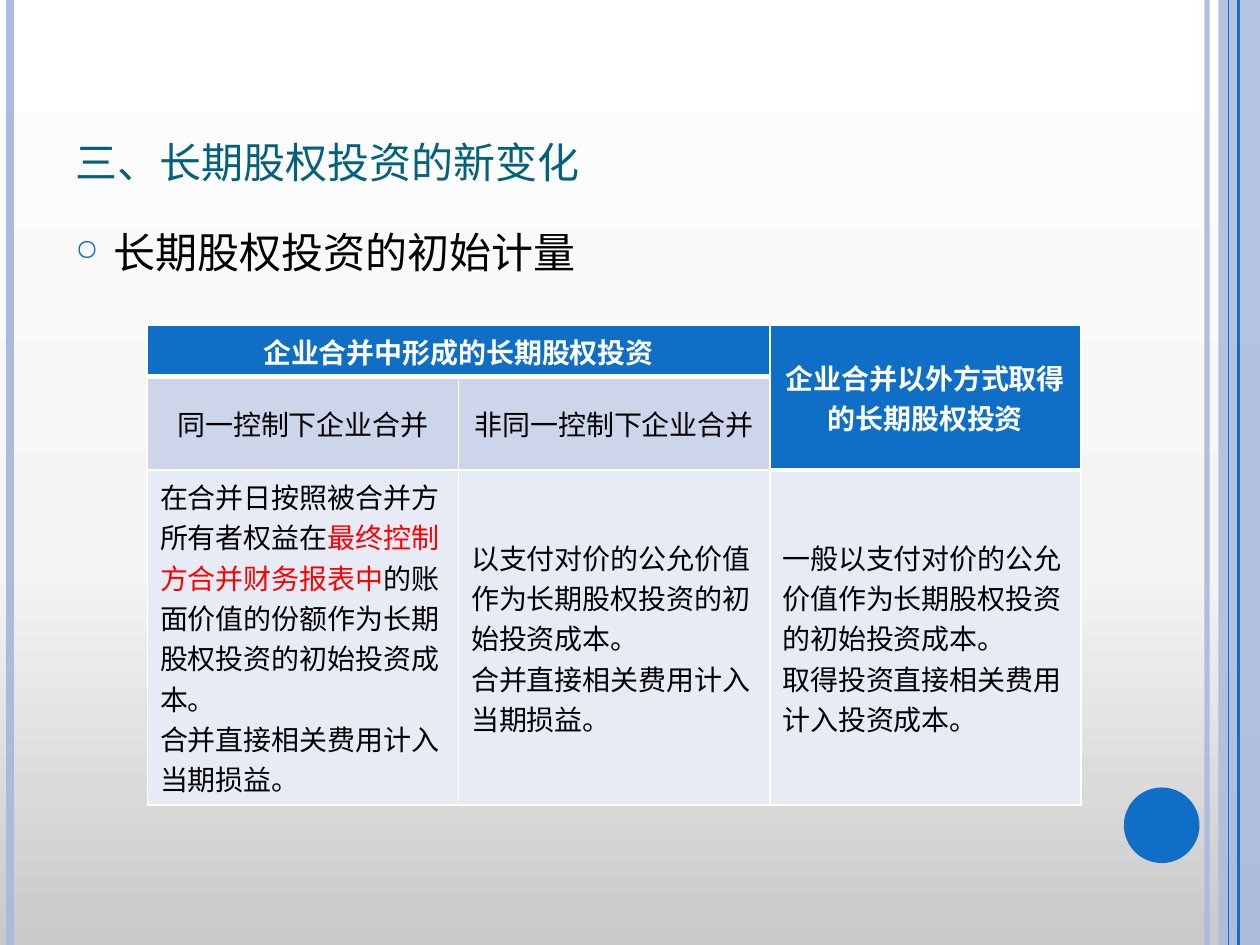
from pptx import Presentation
from pptx.dml.color import RGBColor as RGB
from pptx.enum.shapes import MSO_CONNECTOR as LINE, MSO_SHAPE as SHAPE
from pptx.enum.text import MSO_ANCHOR as ANCHOR, PP_ALIGN as ALIGN
from pptx.oxml import parse_xml as parse
from pptx.oxml.ns import nsdecls as names
from pptx.util import Inches, Pt
from lxml.etree import SubElement as Sub
from dataclasses import dataclass


@dataclass
class Theme:
    face: str = "Karla"
    blue: str = "0F6FC6"
    pale: str = "ABBBDF"
    teal: str = "04617B"
    black: str = "000000"
    white: str = "FFFFFF"
    red: str = "FF0000"
    band: str = "CCD5EA"
    light: str = "E7EBF5"
    title: int = 30
    body: int = 24
    cell: int = 16


look = Theme()
NS = names("a")


def write(par, text, size, color, bold=False):
    run = par.add_run()
    run.text = text
    style = {"name": look.face, "size": Pt(size), "bold": bold}
    for key, value in style.items():
        setattr(run.font, key, value)
    run.font.color.rgb = RGB.from_string(color)
    return run


def fade(fill, alpha):
    color = fill._xPr.find(".//{*}srgbClr")
    color.append(parse(f'<a:alpha {NS} val="{alpha * 1000}"/>'))


deck = Presentation()
deck.slide_width, deck.slide_height = Inches(10), Inches(7.5)
slide = deck.slides.add_slide(deck.slide_layouts[6])
shapes = slide.shapes

stops = "".join(
    f'<a:gs pos="{pos * 1000}"><a:srgbClr val="{color}"/></a:gs>'
    for pos, color in [(0, "C9C9C9"), (40, "F4F4F4"), (100, look.white)]
)
slide.element.cSld.insert(0, parse(
    f'<p:bg {names("p", "a")}><p:bgPr><a:gradFill><a:gsLst>{stops}</a:gsLst>'
    '<a:lin ang="16200000" scaled="0"/></a:gradFill><a:effectLst/></p:bgPr></p:bg>'
))

rules = [
    (9.58, look.pale, 3, 93),
    (0.08, look.pale, 4.5, 100),
    (9.83, look.blue, 1.5, 100),
    (9.75, look.blue, 0.75, 100),
]
blocks = [
    (SHAPE.RECTANGLE, (9.67, 0, 0.33, 7.5), look.pale, 87),
    (SHAPE.OVAL, (8.92, 6.25, 0.6, 0.6), look.blue, 100),
]


for kind, box, color, alpha in blocks:
    shape = shapes.add_shape(kind, *map(Inches, box))
    shape.shadow.inherit = False
    shape.fill.solid()
    shape.fill.fore_color.rgb = RGB.from_string(color)
    shape.line.fill.background()
    if alpha < 100:
        fade(shape.fill, alpha)

for x, color, width, alpha in rules:
    rule = shapes.add_connector(LINE.STRAIGHT, Inches(x), 0, Inches(x), Inches(7.5))
    rule.line.width = Pt(width)
    rule.line.color.rgb = RGB.from_string(color)
    if alpha < 100:
        fade(rule.line.fill, alpha)
    rule._element.spPr.append(parse(f"<a:effectLst {NS}/>"))

texts = [
    ("三、长期股权投资的新变化", (0.5, 0.3, 8.17, 1.25), ANCHOR.BOTTOM, look.title, look.teal),
    ("长期股权投资的初始计量", (0.5, 1.75, 8.17, 5.33), ANCHOR.TOP, look.body, look.black),
]
for text, box, anchor, size, color in texts:
    frame = shapes.add_textbox(*map(Inches, box)).text_frame
    frame.word_wrap = True
    frame.vertical_anchor = anchor
    par = frame.paragraphs[0]
    run = write(par, text, size, color)
    if size == look.title:
        run.font._element.set("cap", "small")
    else:
        par.space_before = Pt(6)
        props = par._p.get_or_add_pPr()
        props.set("marL", str(Inches(0.3)))
        props.set("indent", str(Inches(-0.3)))
        for part in (
            f'<a:buClr {NS}><a:srgbClr val="{look.blue}"/></a:buClr>',
            f'<a:buSzPct {NS} val="70000"/>',
            f'<a:buChar {NS} char="○"/>',
        ):
            props.append(parse(part))

fee = "合并直接相关费用计入当期损益。"
head = (look.blue, look.white, True, ALIGN.CENTER)
sub = (look.band, look.black, False, ALIGN.CENTER)
plain = (look.light, look.black, False, ALIGN.LEFT)
cells = {
    (0, 0): (head, [["企业合并中形成的长期股权投资"]]),
    (0, 1): (head, []),
    (0, 2): (head, [["企业合并以外方式取得的长期股权投资"]]),
    (1, 0): (sub, [["同一控制下企业合并"]]),
    (1, 1): (sub, [["非同一控制下企业合并"]]),
    (1, 2): (head, []),
    (2, 0): (plain, [
        ["在合并日按照被合并方所有者权益在", "最终控制方合并财务报表中",
         "的账面价值的份额作为长期股权投资的初始投资成本。"],
        [fee],
    ]),
    (2, 1): (plain, [["以支付对价的公允价值作为长期股权投资的初始投资成本。"], [fee]]),
    (2, 2): (plain, [
        ["一般以支付对价的公允价值作为长期股权投资的初始投资成本。"],
        ["取得投资直接相关费用计入投资成本。"],
    ]),
}
rows = [0.41, 0.74, 2.66]
table = shapes.add_table(
    3, 3, Inches(1.17), Inches(2.58), Inches(7.42), Inches(sum(rows))
).table
for row, tall in zip(table.rows, rows):
    row.height = Inches(tall)
for col in table.columns:
    col.width = Inches(2.47)
table.cell(0, 0).merge(table.cell(0, 1))
table.cell(0, 2).merge(table.cell(1, 2))

for (row, col), (style, pars) in cells.items():
    back, ink, bold, align = style
    cell = table.cell(row, col)
    cell.vertical_anchor = ANCHOR.MIDDLE
    props = cell._tc.get_or_add_tcPr()
    for side in "LRTB":
        thick = (side == "B" and style is head) or (side == "T" and (row, col) in [(1, 0), (1, 1), (2, 2)])
        props.append(parse(
            f'<a:ln{side} {NS} w="{Pt(3 if thick else 1)}"><a:solidFill>'
            f'<a:srgbClr val="{look.white}"/></a:solidFill></a:ln{side}>'
        ))
    cell.fill.solid()
    cell.fill.fore_color.rgb = RGB.from_string(back)
    frame = cell.text_frame
    for i, runs in enumerate(pars):
        par = frame.add_paragraph() if i else frame.paragraphs[0]
        par.alignment = align
        for j, text in enumerate(runs):
            write(par, text, look.cell, look.red if j == 1 else ink, bold)

deck.save("out.pptx")
